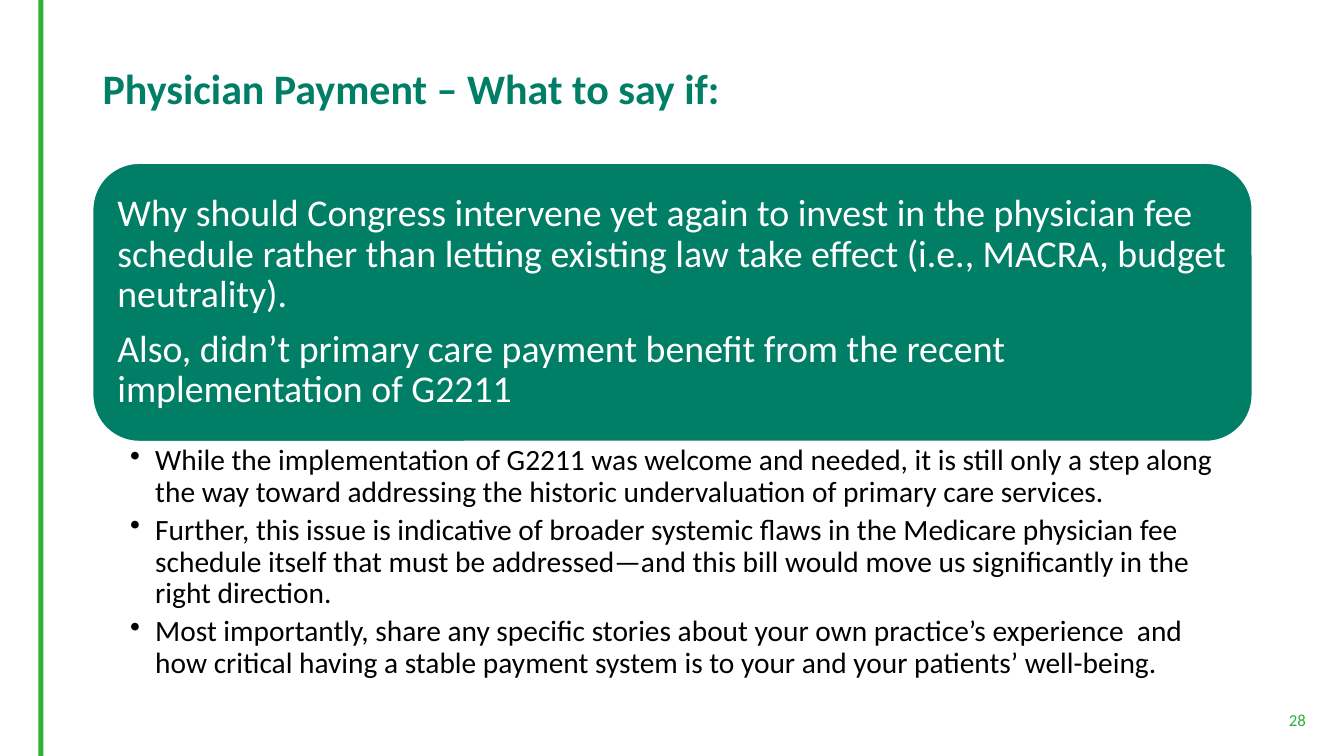
import pptx
import pptx.util
import pptx.dml.color
import pptx.enum.shapes
import pptx.enum.text
import lxml.etree

PX = 9144
GREEN = "2EB135"
TEAL = "007E66"
WHITE = "FFFFFF"
BLACK = "000000"
ANCHOR = pptx.enum.text.MSO_ANCHOR
ALIGN = pptx.enum.text.PP_ALIGN
SHAPE = pptx.enum.shapes.MSO_SHAPE


def color(value):
    return pptx.dml.color.RGBColor.from_string(value)


def write(box, texts, size, ink, anchor, margins, align=ALIGN.LEFT,
          spacing=0.9, after=0, bold=False, bullet=False):
    frame = box.text_frame
    frame.word_wrap = True
    frame.vertical_anchor = anchor
    frame.margin_left, frame.margin_top, frame.margin_right, frame.margin_bottom = [
        margin * PX for margin in margins]
    for index, text in enumerate(texts):
        para = frame.paragraphs[0] if index == 0 else frame.add_paragraph()
        para.text = text
        para.alignment = align
        para.line_spacing = spacing
        para.space_after = pptx.util.Pt(after)
        if bullet:
            properties = para._p.get_or_add_pPr()
            properties.set("marL", str(25 * PX))
            properties.set("indent", str(-25 * PX))
            mark = lxml.etree.SubElement(properties, pptx.oxml.ns.qn("a:buChar"))
            mark.set("char", "•")
        para.font.name = "Calibri"
        para.font.size = pptx.util.Pt(size)
        para.font.bold = bold
        para.font.color.rgb = color(ink)


deck = pptx.Presentation()
deck.slide_width = 1333 * PX
deck.slide_height = 750 * PX
page = deck.slides.add_slide(deck.slide_layouts[6])
shapes = page.shapes

stripe = shapes.add_shape(SHAPE.RECTANGLE, 38 * PX, 0, 5 * PX, 750 * PX)
stripe.shadow.inherit = False
stripe.fill.solid()
stripe.fill.fore_color.rgb = color(GREEN)
stripe.line.fill.background()

title = shapes.add_textbox(92 * PX, 40 * PX, 1150 * PX, 100 * PX)
write(title, ["Physician Payment – What to say if:"], 30, TEAL,
      ANCHOR.MIDDLE, (10, 5, 10, 5), bold=True)

question = shapes.add_shape(SHAPE.ROUNDED_RECTANGLE, 92 * PX, 162 * PX, 1150 * PX, 276 * PX)
question.shadow.inherit = False
question.fill.solid()
question.fill.fore_color.rgb = color(TEAL)
question.line.color.rgb = color(WHITE)
question.line.width = pptx.util.Pt(1)
write(question, [
    "Why should Congress intervene yet again to invest in the physician fee schedule rather than letting existing law take effect (i.e., MACRA, budget neutrality).",
    "Also, didn’t primary care payment benefit from the recent implementation of G2211",
], 27, WHITE, ANCHOR.MIDDLE, (11, 11, 11, 11), after=9.45)

answers = shapes.add_textbox(92 * PX, 438 * PX, 1150 * PX, 251 * PX)
write(answers, [
    "While the implementation of G2211 was welcome and needed, it is still only a step along the way toward addressing the historic undervaluation of primary care services.",
    "Further, this issue is indicative of broader systemic flaws in the Medicare physician fee schedule itself that must be addressed—and this bill would move us significantly in the right direction.",
    "Most importantly, share any specific stories about your own practice’s experience  and how critical having a stable payment system is to your and your patients’ well-being.",
], 21, BLACK, ANCHOR.TOP, (37, 4, 21, 4), after=4.2, bullet=True)

number = shapes.add_textbox(957 * PX, 699 * PX, 348 * PX, 30 * PX)
write(number, ["28"], 12, GREEN, ANCHOR.BOTTOM, (10, 5, 10, 5),
      align=ALIGN.RIGHT, spacing=1.0)

deck.save("out.pptx")
